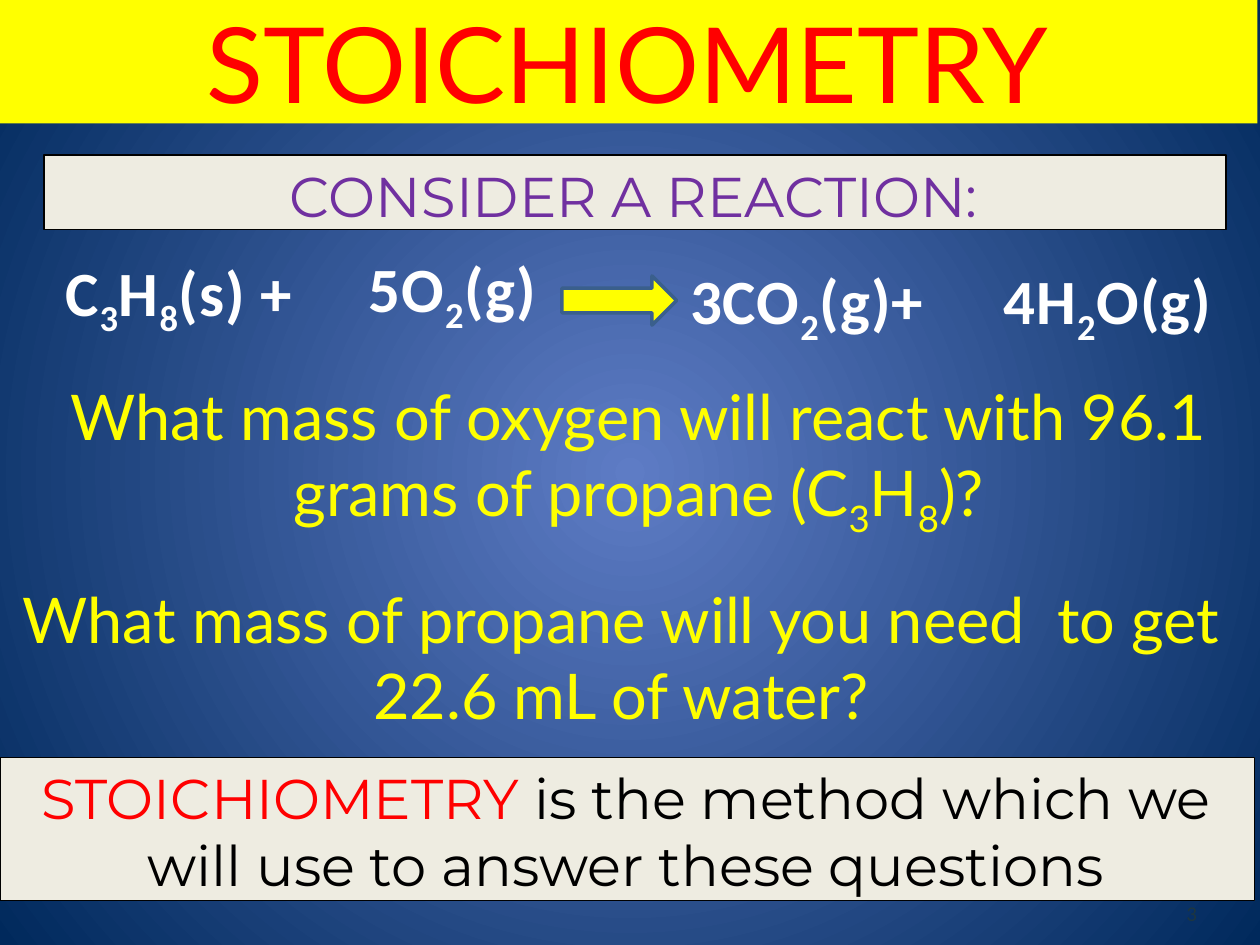
from dataclasses import dataclass, field

from lxml.etree import SubElement
from pptx import Presentation
from pptx.dml.color import RGBColor
from pptx.enum.shapes import MSO_SHAPE
from pptx.enum.text import MSO_ANCHOR, PP_ALIGN
from pptx.oxml.ns import qn
from pptx.util import Inches, Pt

YELLOW, RED, WHITE, CREAM = "FFFF00", "FF0000", "FFFFFF", "EEECE1"
FORMULA = {"size": Pt(36), "name": "Calibri", "bold": True}
QUESTION = {"size": Pt(36), "name": "Lato"}
BANNER = {"size": Pt(32), "name": "Montserrat"}
SUBSCRIPT_MARK = "~"


@dataclass
class Block:
    """Text at (left, top, width, height); phrases pair a text with its colour.

    Text between two subscript marks is set as a subscript.
    """
    box: tuple[float, float, float, float]
    phrases: list[tuple[str, str]]
    font: dict
    fill: str | None = None
    line: str | None = None
    spacing: int = 0
    paragraph: dict = field(default_factory=lambda: {"alignment": PP_ALIGN.CENTER})
    frame: dict = field(default_factory=dict)


def rgb(value: str) -> RGBColor:
    return RGBColor.from_string(value)


def apply_format(target, values: dict) -> None:
    for name, value in values.items():
        setattr(target, name, value)


def insets(left: float, top: float, right: float, bottom: float) -> dict:
    sides = ("left", "top", "right", "bottom")
    return {f"margin_{side}": Inches(size)
            for side, size in zip(sides, (left, top, right, bottom))}


def draw_shape(slide, kind, box: tuple, fill: str, line: str | None, weight: float):
    shape = slide.shapes.add_shape(kind, *map(Inches, box))
    shape.shadow.inherit = False
    shape.fill.solid()
    shape.fill.fore_color.rgb = rgb(fill)
    if line:
        shape.line.color.rgb = rgb(line)
        shape.line.width = Pt(weight)
    else:
        shape.line.fill.background()
    return shape


def draw_block(slide, block: Block) -> None:
    if block.fill:
        holder = draw_shape(slide, MSO_SHAPE.RECTANGLE, block.box,
                            block.fill, block.line, 0.75)
    else:
        holder = slide.shapes.add_textbox(*map(Inches, block.box))
    frame = holder.text_frame
    apply_format(frame, {"word_wrap": True, "vertical_anchor": MSO_ANCHOR.TOP}
                 | block.frame)
    paragraph = frame.paragraphs[0]
    apply_format(paragraph, block.paragraph)
    for text, color in block.phrases:
        for index, piece in enumerate(text.split(SUBSCRIPT_MARK)):
            run = paragraph.add_run()
            run.text = piece
            apply_format(run.font, block.font)
            run.font.color.rgb = rgb(color)
            properties = run._r.get_or_add_rPr()
            if block.spacing:
                properties.set("spc", str(block.spacing))
            if index % 2:
                properties.set("baseline", "-25000")


def paint_background(slide) -> None:
    """Radial gradient, light in the centre."""
    fill = slide.background.fill
    fill.gradient()
    for stop, color, position in zip(fill.gradient_stops, ("5E7CC5", "00295C"), (0, 1)):
        stop.color.rgb = rgb(color)
        stop.position = position
    gradient = slide._element.find(".//" + qn("a:gradFill"))
    gradient.remove(gradient.find(qn("a:lin")))
    radial = SubElement(gradient, qn("a:path"), {"path": "circle"})
    SubElement(radial, qn("a:fillToRect"), dict.fromkeys("ltrb", "50000"))


def formula(text: str, box: tuple, align=PP_ALIGN.CENTER) -> Block:
    return Block(box, [(text, WHITE)], FORMULA, spacing=50,
                 paragraph={"alignment": align})


def question(text: str, left: float, top: float) -> Block:
    return Block((left, top, 10.06, 1.65), [(text, YELLOW)], QUESTION,
                 frame=insets(0, 0.05, 0, 0))


def banner(phrases: list, box: tuple) -> Block:
    return Block(box, phrases, BANNER, fill=CREAM, line="000000",
                 paragraph={"alignment": PP_ALIGN.CENTER, "space_before": Pt(6.4)},
                 frame=insets(0, 0.05, 0.02, 0.05))


BLOCKS = [
    Block((-0.02, 0, 10, 0.98), [("STOICHIOMETRY", RED)],
          {"size": Pt(60), "name": "Lato"}, fill=YELLOW,
          frame={"vertical_anchor": MSO_ANCHOR.MIDDLE}),
    Block((8.67, 6.95, 0.83, 0.4), [("3", "1D3641")],
          {"size": Pt(12), "name": "Calibri"},
          paragraph={"alignment": PP_ALIGN.RIGHT},
          frame=insets(0, 0, 0, 0) | {"vertical_anchor": MSO_ANCHOR.BOTTOM}),
    banner([("CONSIDER A REACTION:", "7030A0")], (0.35, 1.23, 9.38, 0.59)),
    formula("3CO~2~(g)+", (5.38, 2.03, 2.82, 0.71), PP_ALIGN.LEFT),
    formula("4H~2~O(g)", (7.54, 2.03, 2.5, 0.71)),
    formula("C~3~H~8~(s) +", (-0.3, 1.96, 3.44, 0.71)),
    formula("5O~2~(g)", (2.45, 1.93, 2.28, 0.71)),
    question("What mass of oxygen will react with 96.1 grams of propane (C~3~H~8~)?",
             0.04, 2.95),
    question("What mass of propane will you need  to get 22.6 mL of water?",
             -0.1, 4.56),
    banner([("STOICHIOMETRY", RED),
            (" is the method which we will use to answer these questions", "000000")],
           (0, 6.01, 9.96, 1.14)),
]


def main() -> None:
    deck = Presentation()
    deck.slide_width, deck.slide_height = Inches(10), Inches(7.5)
    slide = deck.slides.add_slide(deck.slide_layouts[6])
    paint_background(slide)
    for block in BLOCKS:
        draw_block(slide, block)
    draw_shape(slide, MSO_SHAPE.RIGHT_ARROW, (4.46, 2.19, 0.91, 0.39),
               YELLOW, "3A5F8C", 2)
    deck.save("out.pptx")


if __name__ == "__main__":
    main()
